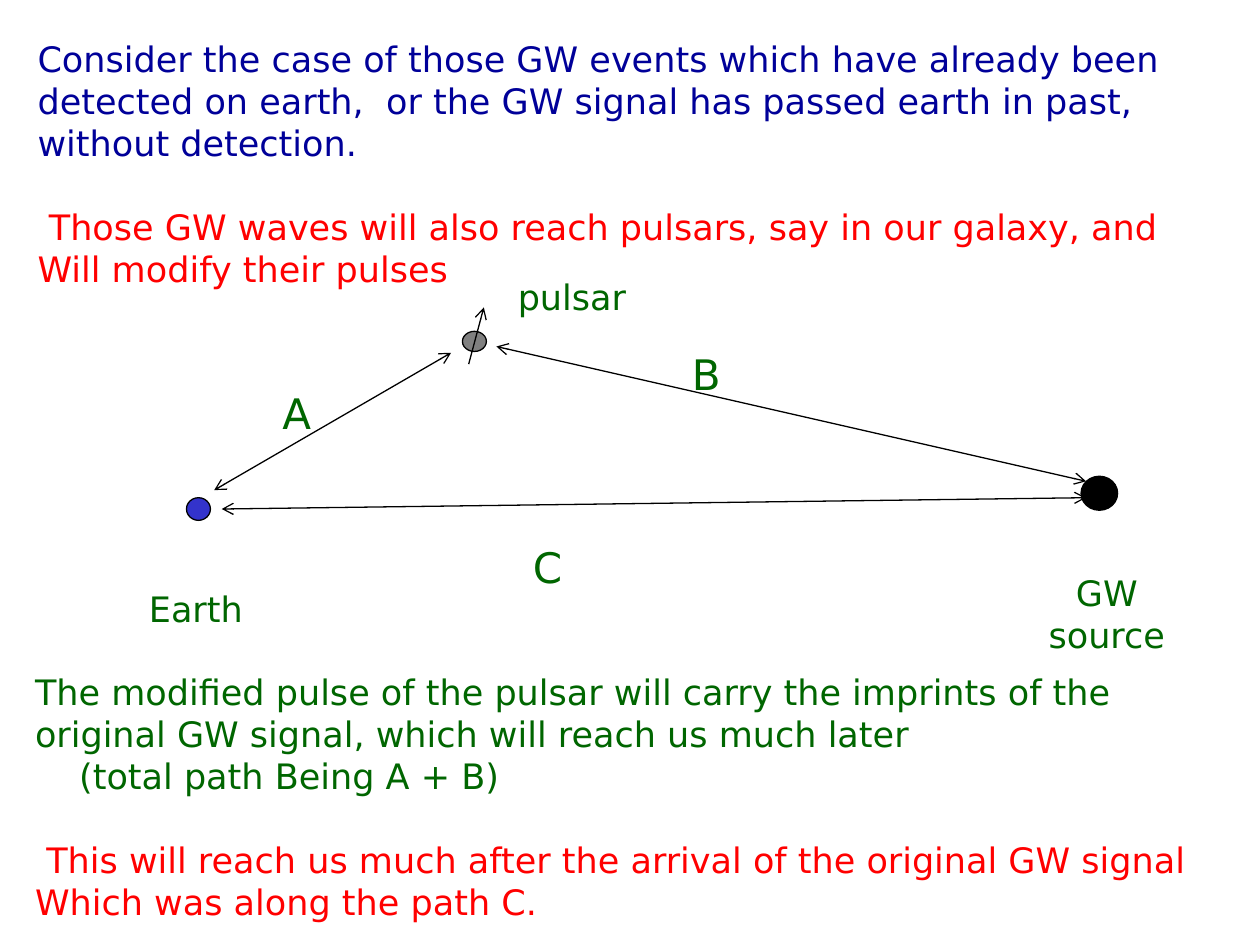
from dataclasses import dataclass

from lxml.etree import SubElement
from pptx import Presentation
from pptx.dml.color import RGBColor
from pptx.enum.shapes import MSO_CONNECTOR, MSO_SHAPE
from pptx.enum.text import MSO_AUTO_SIZE, PP_ALIGN
from pptx.oxml.ns import qn
from pptx.util import Inches, Pt


@dataclass(frozen=True)
class Theme:
    font: str = "DejaVu Sans"
    body: int = 20
    path_label: int = 24
    blank_line: int = 24
    outline: float = 0.75
    black: str = "000000"
    blue: str = "000099"
    green: str = "006600"
    red: str = "FF0000"
    earth: str = "3333CC"
    pulsar: str = "808080"


THEME = Theme()


def apply_format(target, values):
    for name, value in values.items():
        setattr(target, name, value)


def add_text(slide, box, lines, size=THEME.body, wrap=True, alignment=PP_ALIGN.LEFT):
    shape = slide.shapes.add_textbox(*map(Inches, box))
    frame = shape.text_frame
    apply_format(frame, {"word_wrap": wrap, "auto_size": MSO_AUTO_SIZE.SHAPE_TO_FIT_TEXT})
    for index, (text, color, indent, space) in enumerate(lines):
        paragraph = frame.add_paragraph() if index else frame.paragraphs[0]
        apply_format(paragraph, {"alignment": alignment, "space_before": Pt(space)})
        if indent:
            paragraph._p.get_or_add_pPr().set("indent", str(Inches(indent)))
        run = paragraph.add_run()
        run.text = text
        apply_format(run.font, {"name": THEME.font, "size": Pt(size)})
        run.font.color.rgb = RGBColor.from_string(color)


def add_label(slide, box, text, size=THEME.body):
    lines = [(line, THEME.green, 0, 0) for line in text.split("\n")]
    add_text(slide, box, lines, size, wrap=False, alignment=PP_ALIGN.CENTER)


def add_body(slide, box, color):
    left, top, width, height = box
    shape = slide.shapes.add_shape(MSO_SHAPE.OVAL, *map(Inches, (left, top, width, height)))
    shape.shadow.inherit = False
    shape.fill.solid()
    shape.fill.fore_color.rgb = RGBColor.from_string(color)
    shape.line.color.rgb = RGBColor.from_string(THEME.black)
    shape.line.width = Pt(THEME.outline)


def add_arrow(slide, start, end, heads):
    connector = slide.shapes.add_connector(
        MSO_CONNECTOR.STRAIGHT, *map(Inches, (*start, *end))
    )
    connector.line.color.rgb = RGBColor.from_string(THEME.black)
    connector.line.width = Pt(THEME.outline)
    outline = connector.line._get_or_add_ln()
    for head in heads:
        SubElement(outline, qn(f"a:{head}"), type="arrow")
    SubElement(connector._element.spPr, qn("a:effectLst"))


def add_diagram(slide, box):
    left, top, width, height = box

    def point(x, y):
        return left + x, top + y

    bodies = [
        ((7.5, 1.64), (0.29, 0.27), THEME.black),
        ((0.4, 1.81), (0.19, 0.18), THEME.earth),
        ((2.59, 0.49), (0.19, 0.16), THEME.pulsar),
    ]
    for corner, size, color in bodies:
        add_body(slide, (*point(*corner), *size), color)

    add_arrow(slide, point(2.64, 0.75), point(2.76, 0.3), ["tailEnd"])
    paths = [
        ((0.68, 1.9), (7.54, 1.81)),
        ((0.62, 1.75), (2.5, 0.66)),
        ((2.86, 0.61), (7.54, 1.68)),
    ]
    for start, end in paths:
        add_arrow(slide, point(*start), point(*end), ["headEnd", "tailEnd"])

    path_labels = {"A": (1.06, 0.89), "B": (4.31, 0.58), "C": (3.05, 2.11)}
    for text, corner in path_labels.items():
        add_label(slide, (*point(*corner), 0.43, 0.5), text, THEME.path_label)

    body_labels = [
        ("GW\nsource", (7.14, 2.35), (1.13, 0.77)),
        ("Earth", (0, 2.47), (0.95, 0.44)),
        ("pulsar", (2.93, 0), (1.06, 0.44)),
    ]
    for text, corner, size in body_labels:
        add_label(slide, (*point(*corner), *size), text)


def add_introduction(slide, box):
    add_text(slide, box, [
        ("Consider the case of those GW events which have already been detected on earth,  "
         "or the GW signal has passed earth in past, without detection.", THEME.blue, 0, 0),
        ("Those GW waves will also reach pulsars, say in our galaxy, and",
         THEME.red, 0.09, THEME.blank_line),
        ("Will modify their pulses", THEME.red, 0, 0),
    ])


def add_conclusion(slide, box):
    add_text(slide, box, [
        ("The modified pulse of the pulsar will carry the imprints of the original GW signal, "
         "which will reach us much later", THEME.green, 0, 0),
        ("(total path Being A + B)", THEME.green, 0.35, 0),
        ("This will reach us much after the arrival of the original GW signal",
         THEME.red, 0.09, THEME.blank_line),
        ("Which was along the path C.", THEME.red, 0, 0),
    ])


def main():
    presentation = Presentation()
    apply_format(presentation, {"slide_width": Inches(10), "slide_height": Inches(7.5)})
    slide = presentation.slides.add_slide(presentation.slide_layouts[6])
    add_diagram(slide, (1.08, 2.14, 8.27, 3.12))
    add_introduction(slide, (0.2, 0.25, 9.8, 2.12))
    add_conclusion(slide, (0.18, 5.27, 9.66, 2.12))
    presentation.save("out.pptx")


if __name__ == "__main__":
    main()
